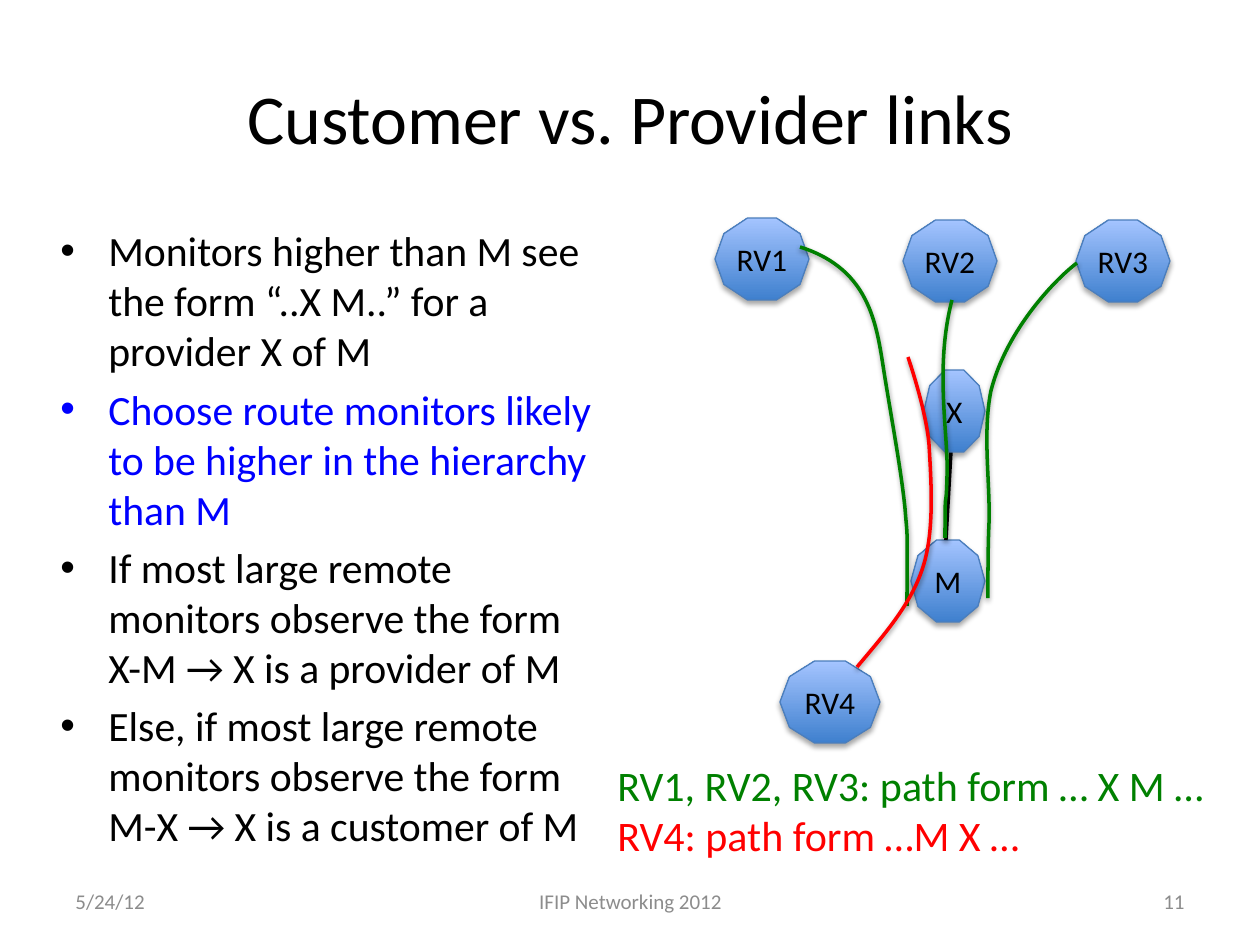
"""Build the slide on customer and provider links between routers."""
from lxml import etree
from pptx import Presentation
from pptx.dml.color import RGBColor
from pptx.enum.shapes import MSO_CONNECTOR, MSO_SHAPE
from pptx.enum.text import MSO_ANCHOR, PP_ALIGN
from pptx.oxml.ns import qn
from pptx.util import Pt

LEFT, MID, RIGHT = PP_ALIGN.LEFT, PP_ALIGN.CENTER, PP_ALIGN.RIGHT
TOP, CENTER = MSO_ANCHOR.TOP, MSO_ANCHOR.MIDDLE
DECAGON, STRAIGHT = MSO_SHAPE.DECAGON, MSO_CONNECTOR.STRAIGHT
PX = 914400 // 126
FONT = "Calibri"
BLACK, BLUE, GREEN, RED, GRAY = "000000", "0000FF", "008000", "FF0000", "8C8C8C"
DARK, LIGHT, EDGE = "3F80CE", "A4C4FF", "4B7EBC"

TITLE = "Customer vs. Provider links"
POINTS = [
    ("Monitors higher than M see the form “..X M..” for a provider X of M", BLACK),
    ("Choose route monitors likely to be higher in the hierarchy than M", BLUE),
    ("If most large remote monitors observe the form X-M → X is a provider of M", BLACK),
    ("Else, if most large remote monitors observe the form M-X → X is a customer of M", BLACK),
]
LEGEND = [
    ("RV1, RV2, RV3: path form … X M …", GREEN),
    ("RV4: path form …M X …", RED),
]
FOOTER = [
    ("5/24/12", 63, 294, LEFT),
    ("IFIP Networking 2012", 431, 399, MID),
    ("11", 903, 294, RIGHT),
]
LOWER = [("M", 911, 540, 74), ("RV1", 715, 218, 94), ("RV4", 780, 661, 100)]
UPPER = [("X", 924, 370, 61), ("RV2", 903, 220, 94), ("RV3", 1076, 220, 94)]
HIGH = 82
LINK = (951, 452, 946, 540)
ROUTES = [
    (GREEN, [(800, 247), (873, 270), (877, 329), (885, 378), (893, 427), (901, 470),
             (905, 508), (908, 546), (907, 518), (907, 606)]),
    (GREEN, [(952, 300), (934, 369), (949, 437), (947, 477), (946, 517), (945, 477),
             (945, 538)]),
    (GREEN, [(1077, 263), (1058, 277), (1007, 328), (991, 391), (984, 426), (988, 465),
             (989, 499), (990, 534), (988, 510), (988, 598)]),
    (RED, [(857, 667), (883, 636), (911, 605), (923, 567), (935, 530), (931, 479),
           (929, 444), (926, 409), (908, 357), (908, 357)]),
]


def color(code):
    """Turn a hex string into a colour."""
    return RGBColor.from_string(code)


def place(shape, x, y, w, h):
    """Set the box of a shape in px."""
    shape.left, shape.top, shape.width, shape.height = (n * PX for n in (x, y, w, h))


def write(shape, rows, size, align=LEFT, anchor=TOP, wrap=True, inset=None, bullet=False):
    """Fill a shape with rows of (text, colour)."""
    frame = shape.text_frame
    frame.word_wrap, frame.vertical_anchor = wrap, anchor
    if inset is not None:
        frame.margin_left = frame.margin_right = inset * PX
    for i, (text, code) in enumerate(rows):
        para = frame.add_paragraph() if i else frame.paragraphs[0]
        para.alignment = align
        run = para.add_run()
        run.text = text
        font = run.font
        font.name, font.size, font.color.rgb = FONT, Pt(size), color(code)
        if bullet:
            para.space_before = Pt(4.75)
            props = para._p.get_or_add_pPr()
            props.set("marL", str(48 * PX))
            props.set("indent", str(-48 * PX))
            etree.SubElement(props, qn("a:buFont"), typeface="Arial")
            etree.SubElement(props, qn("a:buChar"), char="•")


def stroke(shape, code, width):
    """Set the outline of a shape."""
    shape.line.color.rgb, shape.line.width = color(code), Pt(width)


def shade(shape, alpha, dist):
    """Drop a soft black shadow straight down."""
    effect = etree.SubElement(shape._element.spPr, qn("a:effectLst"))
    outer = etree.SubElement(effect, qn("a:outerShdw"), blurRad=str(Pt(3.1)),
                             dist=str(Pt(dist)), dir="5400000", rotWithShape="0")
    tint = etree.SubElement(outer, qn("a:srgbClr"), val=BLACK)
    etree.SubElement(tint, qn("a:alpha"), val=str(alpha * 1000))


def box(shapes, x, y, w, h):
    """Add an empty text box."""
    return shapes.add_textbox(*(n * PX for n in (x, y, w, h)))


def node(shapes, name, x, y, w):
    """Add a named router."""
    shape = shapes.add_shape(DECAGON, x * PX, y * PX, w * PX, HIGH * PX)
    shape.fill.gradient()
    shape.fill.gradient_angle = 90
    for stop, code in zip(shape.fill.gradient_stops, (DARK, LIGHT)):
        stop.color.rgb = color(code)
    stroke(shape, EDGE, 0.75)
    shade(shape, 35, 1.8)
    write(shape, [(name, BLACK)], 18, MID, CENTER, wrap=False, inset=0)


def bend(shape, knots):
    """Turn the straight legs of a freeform into cubic curves."""
    legs = list(shape._element.spPr.iter(qn("a:lnTo")))
    for i, leg in enumerate(legs):
        leg.tag = qn("a:cubicBezTo")
        for k, (x, y) in enumerate(knots[3 * i + 1:3 * i + 3]):
            point = etree.Element(qn("a:pt"), x=str(x * PX - shape.left),
                                  y=str(y * PX - shape.top))
            leg.insert(k, point)


def route(shapes, code, knots):
    """Add a curved path between routers."""
    start, *rest = knots[::3]
    pen = shapes.build_freeform(*start, scale=PX)
    pen.add_line_segments(rest, close=False)
    shape = pen.convert_to_shape()
    path = shape._element.spPr.find(".//" + qn("a:path"))
    for name in ("w", "h"):
        path.set(name, str(int(path.get(name)) * PX))
    for point in path.iter(qn("a:pt")):
        for name in ("x", "y"):
            point.set(name, str(int(point.get(name)) * PX))
    bend(shape, knots)
    shape.fill.background()
    stroke(shape, code, 2)
    shade(shape, 38, 1.6)


def main():
    """Make the deck and save it."""
    deck = Presentation()
    deck.slide_width, deck.slide_height = 1260 * PX, 945 * PX
    shapes = deck.slides.add_slide(deck.slide_layouts[5]).shapes
    place(shapes.title, 63, 38, 1134, 157)
    write(shapes.title, [(TITLE, BLACK)], 40, MID, CENTER)
    write(box(shapes, 48, 219, 557, 624), POINTS, 23.8, bullet=True)
    for text, x, w, align in FOOTER:
        write(box(shapes, x, 876, w, 50), [(text, GRAY)], 12, align, CENTER)
    for item in LOWER:
        node(shapes, *item)
    link = shapes.add_connector(STRAIGHT, *(n * PX for n in LINK))
    stroke(link, BLACK, 2)
    shade(link, 38, 1.6)
    for item in UPPER:
        node(shapes, *item)
    write(box(shapes, 605, 753, 725, 115), LEGEND, 24)
    for item in ROUTES:
        route(shapes, *item)
    deck.save("out.pptx")


if __name__ == "__main__":
    main()
